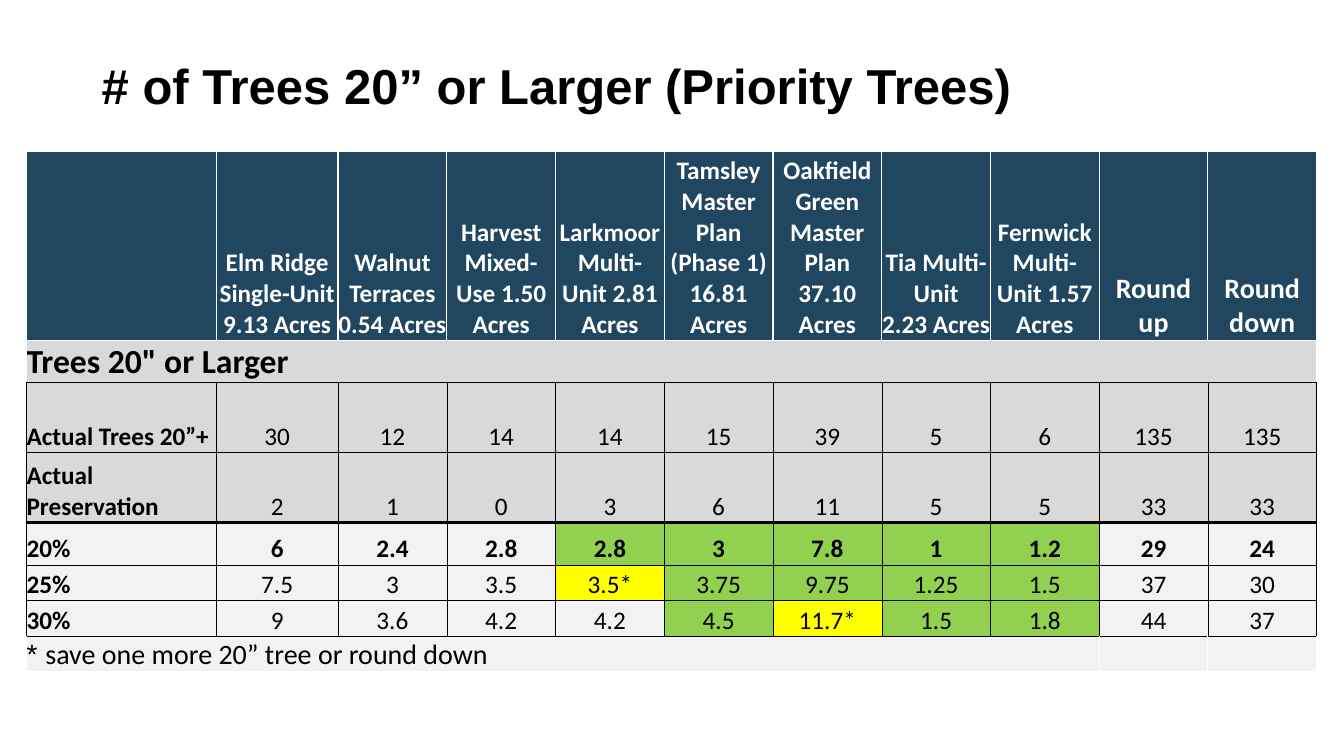
from lxml import etree
from pptx import Presentation, util as u
from pptx.dml.color import RGBColor
from pptx.enum import text
from pptx.oxml.ns import qn

NAVY = RGBColor(0x20, 0x46, 0x60)
GREY = RGBColor(0xD9, 0xD9, 0xD9)
PALE = RGBColor(0xF2, 0xF2, 0xF2)
GREEN = RGBColor(0x92, 0xD0, 0x50)
YELLOW = RGBColor(0xFF, 0xFF, 0x00)
WHITE = RGBColor(0xFF, 0xFF, 0xFF)
BLACK = RGBColor(0, 0, 0)

HAIRLINE = (BLACK, 0.25)
RULE = (BLACK, 2.25)
WHITE_LINE = (WHITE, 1)

ROWS = [
    ["", "Elm Ridge Single-Unit 9.13 Acres", "Walnut\nTerraces 0.54 Acres",
     "Harvest Mixed-Use 1.50 Acres", "Larkmoor Multi-Unit 2.81 Acres",
     "Tamsley Master Plan\n(Phase 1) 16.81 Acres",
     "Oakfield Green Master Plan\n37.10 Acres", "Tia Multi-Unit\n2.23 Acres",
     "Fernwick Multi-Unit 1.57 Acres", "Round\nup", "Round\ndown"],
    ['Trees 20" or Larger'] + [""] * 10,
    ["Actual Trees 20”+", "30", "12", "14", "14", "15", "39", "5", "6", "135", "135"],
    ["Actual Preservation", "2", "1", "0", "3", "6", "11", "5", "5", "33", "33"],
    ["20%", "6", "2.4", "2.8", "2.8", "3", "7.8", "1", "1.2", "29", "24"],
    ["25%", "7.5", "3", "3.5", "3.5*", "3.75", "9.75", "1.25", "1.5", "37", "30"],
    ["30%", "9", "3.6", "4.2", "4.2", "4.5", "11.7*", "1.5", "1.8", "44", "37"],
    ["* save one more 20” tree or round down"] + [""] * 10,
]
HEADER, SECTION, PRESERVED, TARGET, NOTE = 0, 1, 3, 4, 7
ROW_FILLS = [NAVY, GREY, GREY, GREY, PALE, PALE, PALE, PALE]
FIRST_GREEN = {4: 4, 5: 5, 6: 5}  # first column met, by row
LAST_PROJECT = 8
ROW_HEIGHTS = [4.75, 1.07, 1.76, 1.76, 1.07, 0.9, 0.9, 0.9]
COLUMN_WIDTHS = [4.78, 3.07] + [2.74] * 9


def set_borders(cell, left, right, top, bottom):
    properties = cell._tc.get_or_add_tcPr()
    for tag, (colour, points) in zip(("lnL", "lnR", "lnT", "lnB"),
                                     (left, right, top, bottom)):
        line = etree.SubElement(properties, qn("a:" + tag), w=str(u.Pt(points)))
        solid = etree.SubElement(line, qn("a:solidFill"))
        etree.SubElement(solid, qn("a:srgbClr"), val=str(colour))


deck = Presentation()
deck.slide_width, deck.slide_height = u.Cm(33.87), u.Cm(19.05)
page = deck.slides.add_slide(deck.slide_layouts[5])

# Title
title = page.shapes.title
title.left, title.top, title.width, title.height = u.Cm(2.31), u.Cm(1.37), u.Cm(29.21), u.Cm(1.65)
title.text_frame.text = "# of Trees 20” or Larger (Priority Trees)"
title.text_frame.vertical_anchor = text.MSO_ANCHOR.BOTTOM
title.text_frame.auto_size = text.MSO_AUTO_SIZE.NONE
para = title.text_frame.paragraphs[0]
para.alignment = text.PP_ALIGN.LEFT
para.line_spacing = 0.9
para.font.name, para.font.size, para.font.bold = "Arial", u.Pt(35), True
para.font.color.rgb = BLACK

# Table grid
table = page.shapes.add_table(len(ROWS), len(COLUMN_WIDTHS), u.Cm(0.67), u.Cm(3.82),
                              u.Cm(sum(COLUMN_WIDTHS)), u.Cm(sum(ROW_HEIGHTS))).table
table.first_row = table.horz_banding = False
for column, width in zip(table.columns, COLUMN_WIDTHS):
    column.width = u.Cm(width)
for row, height in zip(table.rows, ROW_HEIGHTS):
    row.height = u.Cm(height)
table.cell(SECTION, 0).merge(table.cell(SECTION, 10))
table.cell(NOTE, 0).merge(table.cell(NOTE, LAST_PROJECT))

# Cells
for r, values in enumerate(ROWS):
    for c, value in enumerate(values):
        cell = table.cell(r, c)
        cell.margin_left = cell.margin_right = cell.margin_top = cell.margin_bottom = 0
        cell.vertical_anchor = text.MSO_ANCHOR.BOTTOM

        side = WHITE_LINE if r in (HEADER, SECTION, NOTE) else HAIRLINE
        top = WHITE_LINE if r <= SECTION else RULE if r == TARGET else HAIRLINE
        bottom = WHITE_LINE if r in (HEADER, NOTE) else RULE if r == PRESERVED else HAIRLINE
        set_borders(cell, side, side, top, bottom)

        fill = ROW_FILLS[r]
        if value.endswith("*"):
            fill = YELLOW
        elif r in FIRST_GREEN and FIRST_GREEN[r] <= c <= LAST_PROJECT:
            fill = GREEN
        cell.fill.solid()
        cell.fill.fore_color.rgb = fill

        size = 18
        if r == SECTION:
            size = 24
        elif r == NOTE or (r == HEADER and c > LAST_PROJECT):
            size = 20
        cell.text_frame.text = value
        for para in cell.text_frame.paragraphs:
            para.alignment = text.PP_ALIGN.CENTER if c else text.PP_ALIGN.LEFT
            para.font.name, para.font.size = "Calibri", u.Pt(size)
            para.font.bold = r != NOTE and (c == 0 or r in (HEADER, TARGET))
            para.font.color.rgb = WHITE if r == HEADER else BLACK

# Footnote marker in its own font
para = table.cell(NOTE, 0).text_frame.paragraphs[0]
marker, note = para.runs[0], para.add_run()
marker.text, note.text = "* ", marker.text[2:]
marker.font.name = "Arial"

deck.save("out.pptx")
